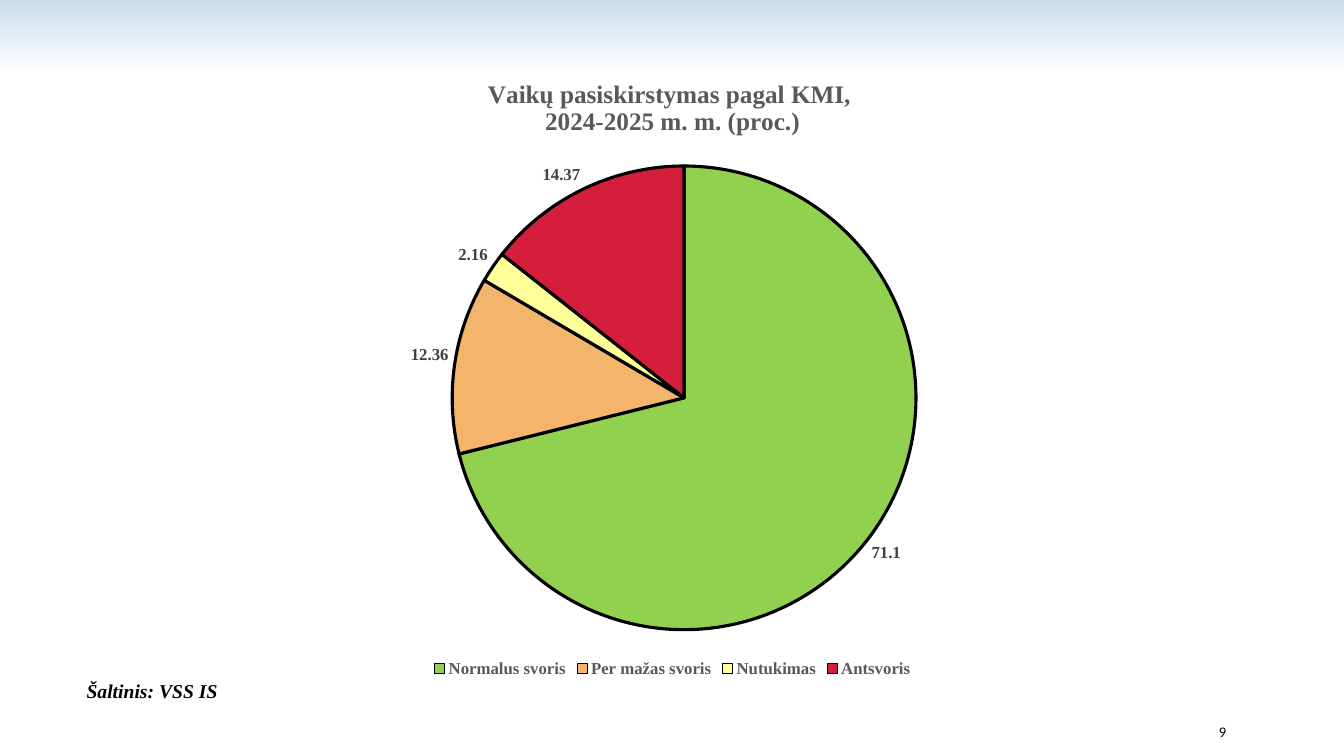
from pptx import Presentation
from pptx.chart.data import CategoryChartData as Data
from pptx.dml.color import RGBColor as Rgb
from pptx.enum.chart import XL_CHART_TYPE as Kind, XL_LABEL_POSITION as Spot, XL_LEGEND_POSITION as Side
from pptx.enum.text import MSO_ANCHOR as Anchor, PP_ALIGN as Align
from pptx.oxml import parse_xml
from pptx.util import Inches, Pt

TITLE = "Vaikų pasiskirstymas pagal KMI, \n2024-2025 m. m. (proc.)"
SLICES = [
    ("Normalus svoris", 71.1, "92D050"),
    ("Per mažas svoris", 12.36, "F3B56C"),
    ("Nutukimas", 2.16, "FFFF99"),
    ("Antsvoris", 14.37, "D41E3C"),
]
SERIF = "Times New Roman"
THEME = {
    "sky": [("CCDDEA", 0), ("FFFFFF", 0.1)],
    "edge": ("000000", 2.25),
    "base": dict(name="Calibri", size=10, color="000000"),
    "title": dict(name=SERIF, size=18, color="595959", bold=True),
    "label": dict(name=SERIF, size=12, color="404040", bold=True),
    "legend": dict(name=SERIF, size=12, color="595959", bold=True),
    "page": dict(name="Calibri", size=10.5, color="000000"),
    "source": dict(name=SERIF, size=14, color="000000", bold=True, italic=True),
}
NOTES = [
    ("9", "page", (10.83, 7.06, 1.43, 0.4), Align.RIGHT, Anchor.MIDDLE, True),
    ("Šaltinis: VSS IS", "source", (0.76, 6.69, 1.51, 0.34), Align.LEFT, Anchor.TOP, False),
]
CHART = (0.92, 0.58, 11.5, 6.18)
PLOT = {"x": 0.31, "y": 0.17, "w": 0.4, "h": 0.75}
NS = "http://schemas.openxmlformats.org/drawingml/2006/chart"


def style(font, role):
    for key, val in THEME[role].items():
        if key == "color":
            font.color.rgb = Rgb.from_string(val)
        else:
            setattr(font, key, Pt(val) if key == "size" else val)


def place(box):
    return [Inches(v) for v in box]


def paint(slide):
    fill = slide.background.fill
    fill.gradient()
    fill.gradient_angle = 270
    for stop, (color, pos) in zip(fill.gradient_stops, THEME["sky"]):
        stop.color.rgb = Rgb.from_string(color)
        stop.position = pos


def add_pie(slide):
    names, vals, hues = zip(*SLICES)
    data = Data()
    data.categories = names
    data.add_series("Series 1", vals)
    chart = slide.shapes.add_chart(Kind.PIE, *place(CHART), data).chart
    style(chart.font, "base")

    chart.has_title = True
    frame = chart.chart_title.text_frame
    frame.text = TITLE
    for para in frame.paragraphs:
        for run in para.runs:
            style(run.font, "title")
    chart.chart_title.include_in_layout = False

    chart.has_legend = True
    chart.legend.position = Side.BOTTOM
    chart.legend.include_in_layout = False
    style(chart.legend.font, "legend")

    plot = chart.plots[0]
    plot.vary_by_categories = True
    plot.has_data_labels = True
    labels = plot.data_labels
    form = dict(show_value=True, show_percentage=False, position=Spot.OUTSIDE_END,
                number_format="General", number_format_is_linked=False)
    for key, val in form.items():
        setattr(labels, key, val)
    style(labels.font, "label")

    edge, width = THEME["edge"]
    for i, hue in enumerate(hues):
        part = plot.series[0].points[i].format
        part.fill.solid()
        part.fill.fore_color.rgb = Rgb.from_string(hue)
        part.line.color.rgb = Rgb.from_string(edge)
        part.line.width = Pt(width)

    modes = '<c:layoutTarget val="inner"/><c:xMode val="edge"/><c:yMode val="edge"/>'
    sizes = "".join(f'<c:{key} val="{val}"/>' for key, val in PLOT.items())
    area = chart.element.find(f".//{{{NS}}}plotArea")
    for old in area.findall(f"{{{NS}}}layout"):
        area.remove(old)
    area.insert(0, parse_xml(
        f'<c:layout xmlns:c="{NS}"><c:manualLayout>{modes}{sizes}</c:manualLayout></c:layout>'))


def add_note(slide, text, role, box, align, anchor, wrap):
    frame = slide.shapes.add_textbox(*place(box)).text_frame
    frame.word_wrap = wrap
    frame.vertical_anchor = anchor
    para = frame.paragraphs[0]
    para.alignment = align
    run = para.add_run()
    run.text = text
    style(run.font, role)


def main():
    deck = Presentation()
    deck.slide_width, deck.slide_height = Inches(13.33), Inches(7.5)
    slide = deck.slides.add_slide(deck.slide_layouts[6])
    paint(slide)
    add_pie(slide)
    for note in NOTES:
        add_note(slide, *note)
    deck.save("out.pptx")


if __name__ == "__main__":
    main()
